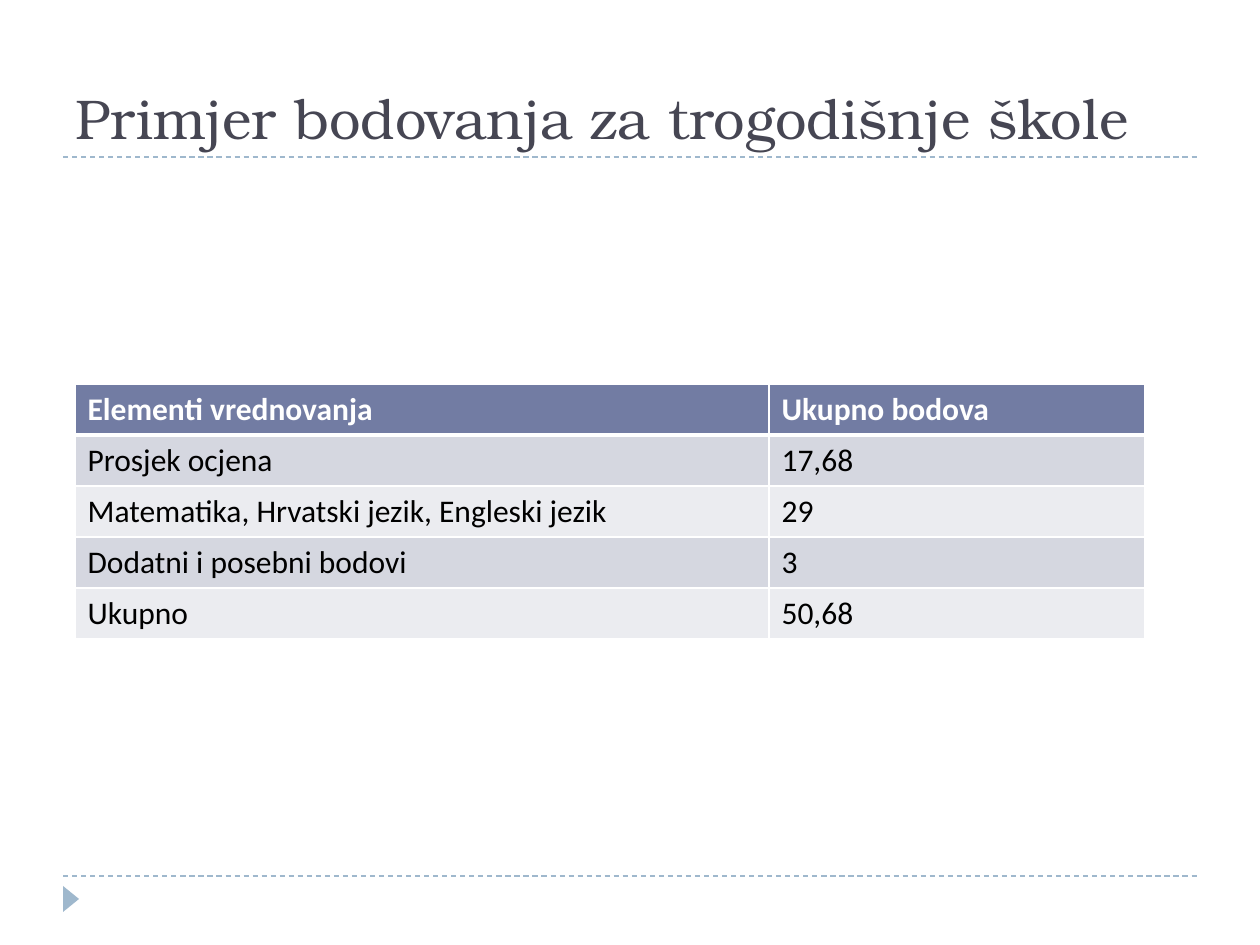
from dataclasses import dataclass

from lxml.etree import SubElement
from pptx import Presentation
from pptx.dml.color import RGBColor
from pptx.enum.dml import MSO_LINE
from pptx.enum.shapes import MSO_CONNECTOR, MSO_SHAPE
from pptx.enum.text import MSO_ANCHOR
from pptx.oxml.ns import qn
from pptx.slide import Slide
from pptx.table import _Cell
from pptx.text.text import Font
from pptx.util import Emu, Pt

PX_PER_INCH = 126
COLORS = {
    "title": "464653",
    "accent": "9FB8CD",
    "header": "727CA3",
    "odd": "D5D7E0",
    "even": "EBECF0",
    "white": "FFFFFF",
    "black": "000000",
}
COLUMN_WIDTHS = (694, 376)
ROW_HEIGHT = 51


@dataclass(frozen=True)
class Score:
    element: str
    points: str


@dataclass(frozen=True)
class Rule:
    left: int
    right: int
    y: int


SCORES = [
    Score("Elementi vrednovanja", "Ukupno bodova"),
    Score("Prosjek ocjena", "17,68"),
    Score("Matematika, Hrvatski jezik, Engleski jezik", "29"),
    Score("Dodatni i posebni bodovi", "3"),
    Score("Ukupno", "50,68"),
]
RULES = [Rule(63, 1197, 876), Rule(63, 1197, 157)]


def px(length: int) -> Emu:
    return Emu(round(length * 914400 / PX_PER_INCH))


def color(name: str) -> RGBColor:
    return RGBColor.from_string(COLORS[name])


def style_font(font: Font, name: str, size: int, tint: str, bold: bool = False) -> None:
    font.name = name
    font.size = Pt(size)
    font.bold = bold
    font.color.rgb = color(tint)


def draw_rule(page: Slide, rule: Rule) -> None:
    line = page.shapes.add_connector(
        MSO_CONNECTOR.STRAIGHT, px(rule.left), px(rule.y), px(rule.right), px(rule.y)
    )
    line.line.color.rgb = color("accent")
    line.line.width = Pt(0.75)
    line.line.dash_style = MSO_LINE.DASH
    SubElement(line._element.spPr, qn("a:effectLst"))


def draw_marker(page: Slide) -> None:
    marker = page.shapes.add_shape(
        MSO_SHAPE.ISOSCELES_TRIANGLE, px(58), px(891), px(26), px(16)
    )
    marker.rotation = 90
    marker.shadow.inherit = False
    marker.fill.solid()
    marker.fill.fore_color.rgb = color("accent")
    marker.line.fill.background()


def draw_title(page: Slide, text: str) -> None:
    box = page.shapes.add_textbox(px(63), px(21), px(1134), px(136))
    frame = box.text_frame
    frame.word_wrap = True
    frame.vertical_anchor = MSO_ANCHOR.BOTTOM
    frame.text = text
    style_font(frame.paragraphs[0].runs[0].font, "TeX Gyre Bonum", 32, "title")


def set_borders(cell: _Cell, widths: dict[str, int]) -> None:
    properties = cell._tc.get_or_add_tcPr()
    for position, (side, width) in enumerate(widths.items()):
        border = properties.makeelement(qn(f"a:{side}"), {"w": str(Pt(width))})
        fill = SubElement(border, qn("a:solidFill"))
        SubElement(fill, qn("a:srgbClr"), val=COLORS["white"])
        properties.insert(position, border)


def draw_scores(page: Slide, scores: list[Score]) -> None:
    table = page.shapes.add_table(
        len(scores), len(COLUMN_WIDTHS), px(75), px(384),
        px(sum(COLUMN_WIDTHS)), px(ROW_HEIGHT * len(scores)),
    ).table
    for column, width in zip(table.columns, COLUMN_WIDTHS):
        column.width = px(width)
    for index, (row, score) in enumerate(zip(table.rows, scores)):
        row.height = px(ROW_HEIGHT)
        header = index == 0
        shade = "header" if header else "odd" if index % 2 else "even"
        top = 3 if index == 1 else 1
        bottom = 3 if header else 1
        for cell, text in zip(row.cells, (score.element, score.points)):
            cell.text_frame.text = text
            cell.fill.solid()
            cell.fill.fore_color.rgb = color(shade)
            set_borders(cell, {"lnL": 1, "lnR": 1, "lnT": top, "lnB": bottom})
            span = cell.text_frame.paragraphs[0].runs[0]
            style_font(span.font, "Calibri", 18, "white" if header else "black", header)


def main() -> None:
    deck = Presentation()
    deck.slide_width, deck.slide_height = px(1260), px(945)
    page = deck.slides.add_slide(deck.slide_layouts[6])
    for rule in RULES:
        draw_rule(page, rule)
    draw_marker(page)
    draw_title(page, "Primjer bodovanja za trogodišnje škole")
    draw_scores(page, SCORES)
    deck.save("out.pptx")


if __name__ == "__main__":
    main()
